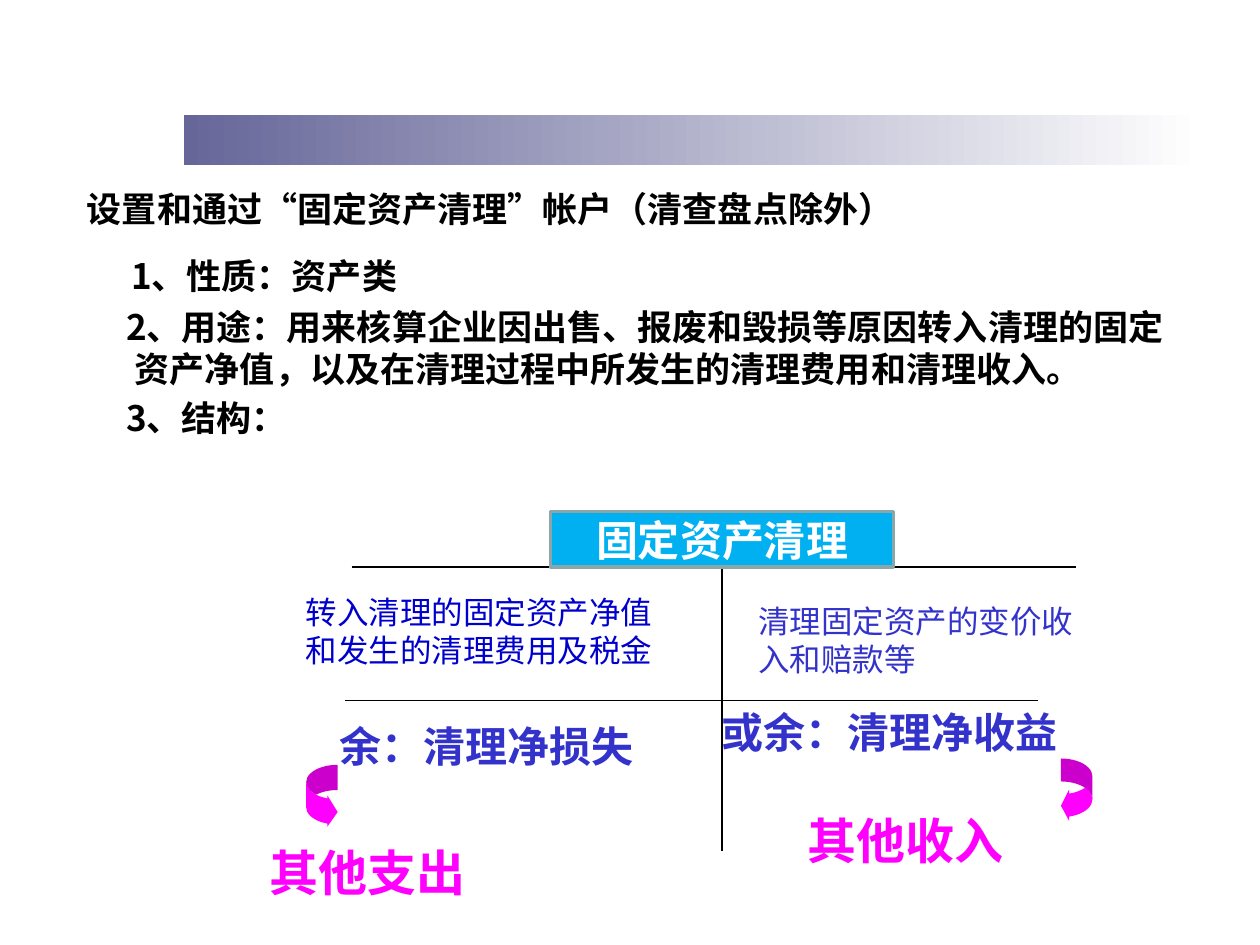
from dataclasses import dataclass

from pptx import Presentation
from pptx.dml.color import RGBColor
from pptx.enum.shapes import MSO_CONNECTOR, MSO_SHAPE
from pptx.enum.text import MSO_ANCHOR, MSO_AUTO_SIZE, PP_ALIGN
from pptx.oxml.ns import qn
from pptx.util import Inches, Pt


@dataclass(frozen=True)
class Theme:
    black: str = "000000"
    white: str = "FFFFFF"
    slate: str = "666699"
    navy: str = "0000CC"
    blue: str = "3333CC"
    magenta: str = "FF00FF"
    cyan: str = "00B0F0"
    border: str = "8AA6A8"
    body_font: str = "Noto Sans CJK SC"
    label_font: str = "Arial"
    result_font: str = "Times New Roman"
    body_size: int = 20
    entry_size: int = 18
    heading_size: int = 24
    result_size: int = 28


THEME = Theme()


@dataclass(frozen=True)
class Box:
    left: float
    top: float
    width: float
    height: float

    def lengths(self) -> tuple:
        return tuple(Inches(n) for n in (self.left, self.top, self.width, self.height))


@dataclass(frozen=True)
class Style:
    size: int
    color: str
    font: str = THEME.label_font
    bold: bool = True


@dataclass(frozen=True)
class Label:
    text: str
    box: Box
    style: Style


@dataclass(frozen=True)
class Rule:
    start: tuple[float, float]
    end: tuple[float, float]


@dataclass(frozen=True)
class Arrow:
    kind: MSO_SHAPE
    box: Box
    adjustments: tuple[float, ...]


@dataclass(frozen=True)
class BodyLine:
    text: str
    first_indent: float
    space_before: float


BALANCE = Style(THEME.heading_size, THEME.blue)
RESULT = Style(THEME.result_size, THEME.magenta, THEME.result_font)

BODY_LINES = [
    BodyLine("设置和通过“固定资产清理”帐户（清查盘点除外）", -0.38, 0),
    BodyLine("1、性质：资产类", -0.03, 14),
    BodyLine("2、用途：用来核算企业因出售、报废和毁损等原因转入清理的固定资产净值，"
             "以及在清理过程中所发生的清理费用和清理收入。", -0.07, 5.5),
    BodyLine("3、结构：", -0.07, 4),
]

RULES = [
    Rule((2.79, 4.5), (8.54, 4.5)),
    Rule((5.73, 4.5), (5.73, 6.75)),
    Rule((2.74, 5.56), (8.24, 5.56)),
]

LABELS = [
    Label("转入清理的固定资产净值和发生的清理费用及税金", Box(2.33, 4.66, 3.17, 0.71),
          Style(THEME.entry_size, THEME.navy, bold=False)),
    Label("清理固定资产的变价收入和赔款等", Box(5.92, 4.73, 2.91, 0.71),
          Style(THEME.entry_size, THEME.blue, bold=False)),
    Label("余：清理净损失", Box(2.6, 5.67, 2.9, 0.5), BALANCE),
    Label("或余：清理净收益", Box(5.63, 5.56, 2.91, 0.5), BALANCE),
    Label("其他支出", Box(2.04, 6.64, 2.01, 0.57), RESULT),
    Label("其他收入", Box(6.31, 6.38, 1.99, 0.57), RESULT),
]

ARROWS = [
    Arrow(MSO_SHAPE.CURVED_RIGHT_ARROW, Box(2.43, 6.07, 0.25, 0.5), (0.8, 1.6, 0.33)),
    Arrow(MSO_SHAPE.CURVED_LEFT_ARROW, Box(8.42, 6.02, 0.25, 0.5), (0.73, 1.47, 0.26)),
]

ACCOUNT = Label("固定资产清理", Box(4.37, 4.06, 2.72, 0.44),
                Style(THEME.heading_size, THEME.white))


def rgb(color: str) -> RGBColor:
    return RGBColor.from_string(color)


def style_paragraph(paragraph, style: Style) -> None:
    paragraph.font.size = Pt(style.size)
    paragraph.font.name = style.font
    paragraph.font.bold = style.bold
    paragraph.font.color.rgb = rgb(style.color)


def add_plain_shape(slide, kind: MSO_SHAPE, box: Box):
    shape = slide.shapes.add_shape(kind, *box.lengths())
    shape.shadow.inherit = False
    shape.line.fill.background()
    return shape


def add_gradient_bar(slide) -> None:
    shape = add_plain_shape(slide, MSO_SHAPE.RECTANGLE, Box(1.46, 0.91, 8.08, 0.4))
    shape.fill.gradient()
    shape.fill.gradient_angle = 0
    for stop, position, color in zip(shape.fill.gradient_stops, (0, 1), (THEME.slate, THEME.white)):
        stop.position = position
        stop.color.rgb = rgb(color)


def fill_body(placeholder, lines: list[BodyLine]) -> None:
    placeholder.left, placeholder.top, placeholder.width, placeholder.height = Box(
        0.59, 1.44, 8.91, 4.62).lengths()
    frame = placeholder.text_frame
    frame.auto_size = MSO_AUTO_SIZE.NONE
    frame.text = "\n".join(line.text for line in lines)
    for paragraph, line in zip(frame.paragraphs, lines):
        style_paragraph(paragraph, Style(THEME.body_size, THEME.black, THEME.body_font))
        paragraph.space_before = Pt(line.space_before)
        properties = paragraph._p.get_or_add_pPr()
        properties.set("marL", str(Inches(0.38)))
        properties.set("indent", str(Inches(line.first_indent)))
        properties.insert_element_before(
            properties.makeelement(qn("a:buNone"), {}), "a:tabLst", "a:defRPr", "a:extLst")


def add_rule(slide, rule: Rule) -> None:
    points = [Inches(n) for n in rule.start + rule.end]
    connector = slide.shapes.add_connector(MSO_CONNECTOR.STRAIGHT, *points)
    connector.line.color.rgb = rgb(THEME.black)
    connector.line.width = Pt(0.75)
    properties = connector._element.spPr
    properties.append(properties.makeelement(qn("a:effectLst"), {}))


def add_label(slide, label: Label) -> None:
    frame = slide.shapes.add_textbox(*label.box.lengths()).text_frame
    frame.word_wrap = True
    frame.auto_size = MSO_AUTO_SIZE.SHAPE_TO_FIT_TEXT
    frame.text = label.text
    style_paragraph(frame.paragraphs[0], label.style)


def add_arrow(slide, arrow: Arrow) -> None:
    shape = add_plain_shape(slide, arrow.kind, arrow.box)
    shape.fill.solid()
    shape.fill.fore_color.rgb = rgb(THEME.magenta)
    for index, value in enumerate(arrow.adjustments):
        shape.adjustments[index] = value


def add_account(slide, label: Label) -> None:
    shape = add_plain_shape(slide, MSO_SHAPE.RECTANGLE, label.box)
    shape.fill.solid()
    shape.fill.fore_color.rgb = rgb(THEME.cyan)
    shape.line.color.rgb = rgb(THEME.border)
    shape.line.width = Pt(2)
    frame = shape.text_frame
    frame.vertical_anchor = MSO_ANCHOR.MIDDLE
    frame.text = label.text
    frame.paragraphs[0].alignment = PP_ALIGN.CENTER
    style_paragraph(frame.paragraphs[0], label.style)


def main() -> None:
    presentation = Presentation()
    presentation.slide_width, presentation.slide_height = Inches(10), Inches(7.5)
    slide = presentation.slides.add_slide(presentation.slide_layouts[1])
    title = slide.shapes.title._element
    title.getparent().remove(title)
    add_gradient_bar(slide)
    fill_body(slide.placeholders[1], BODY_LINES)
    for rule in RULES:
        add_rule(slide, rule)
    for label in LABELS:
        add_label(slide, label)
    for arrow in ARROWS:
        add_arrow(slide, arrow)
    add_account(slide, ACCOUNT)
    presentation.save("out.pptx")


if __name__ == "__main__":
    main()
